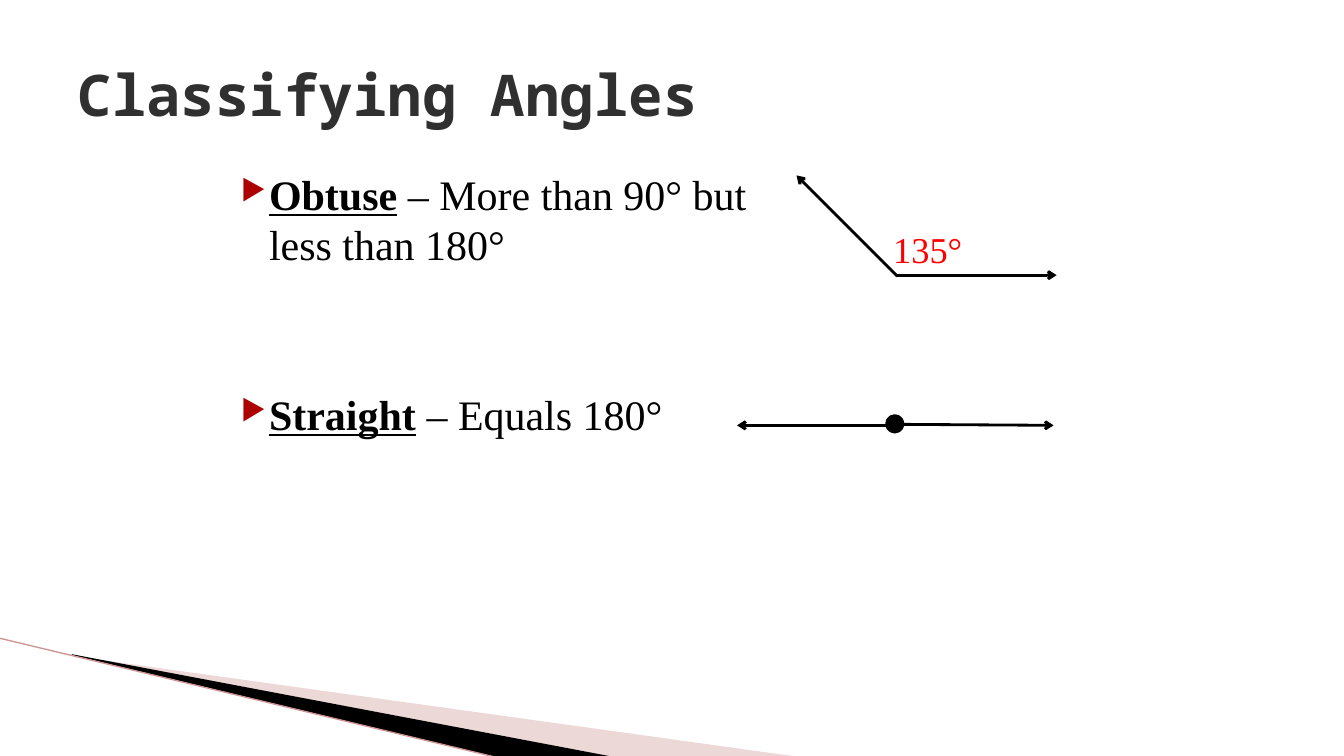
from lxml import etree
from pptx import Presentation
from pptx.dml.color import RGBColor
from pptx.enum.shapes import MSO_CONNECTOR, MSO_SHAPE
from pptx.enum.text import MSO_ANCHOR, PP_ALIGN
from pptx.oxml.ns import qn
from pptx.util import Inches, Pt

STRAIGHT = MSO_CONNECTOR.STRAIGHT
OVAL = MSO_SHAPE.OVAL
MIDDLE = MSO_ANCHOR.MIDDLE
LEFT = PP_ALIGN.LEFT

BLACK = RGBColor(0x00, 0x00, 0x00)
CHARCOAL = RGBColor(0x30, 0x30, 0x30)
RED = RGBColor(0xFF, 0x00, 0x00)
DUSTY_PINK = RGBColor(0xD2, 0x9E, 0x9E)
EDGE_PINK = RGBColor(0xCD, 0x95, 0x95)
BULLET_RED = "AD0101"
SERIF = "Times New Roman"

TITLE = "Classifying Angles"
DEFINITIONS = [
    ("Obtuse", " – More than 90° but less than 180°", 0),
    ("Straight", " – Equals 180°", 85),
]
ANGLE_LABEL = "135°"
WEDGES = [
    ([(0.73, 6.51), (7.93, 7.51), (6.08, 7.51), (0.73, 6.5)], DUSTY_PINK, 40),
    ([(0.71, 6.49), (6.09, 7.51), (4.96, 7.52), (0.72, 6.5)], BLACK, 100),
]
WEDGE_EDGE = ((-0.01, 6.33), (4.95, 7.52))
RAYS = [
    ((8.9, 2.74), (7.9, 1.74)),
    ((8.9, 2.73), (10.48, 2.73)),
    ((8.95, 4.21), (10.45, 4.22)),
    ((8.81, 4.22), (7.31, 4.22)),
]
VERTEX = (8.81, 4.14, 0.13, 0.13)


def box(*lengths):
    return [Inches(length) for length in lengths]


def add_wedge(slide, points, color, opacity):
    corners = [tuple(box(*point)) for point in points]
    builder = slide.shapes.build_freeform(*corners[0])
    builder.add_line_segments(corners[1:], close=True)
    wedge = builder.convert_to_shape()
    wedge.shadow.inherit = False
    wedge.fill.solid()
    wedge.fill.fore_color.rgb = color
    wedge.line.fill.background()
    if opacity < 100:
        color_element = wedge.fill._xPr.find(qn("a:solidFill"))[0]
        etree.SubElement(color_element, qn("a:alpha"), val=str(opacity * 1000))


def add_line(slide, start, end, color, width, arrow=False):
    line = slide.shapes.add_connector(STRAIGHT, *box(*start, *end))
    line.line.color.rgb = color
    line.line.width = Pt(width)
    if arrow:
        etree.SubElement(line.line._get_or_add_ln(), qn("a:tailEnd"), type="arrow")
    etree.SubElement(line._element.spPr, qn("a:effectLst"))


def add_bullet(paragraph):
    properties = paragraph._p.get_or_add_pPr()
    properties.set("marL", str(Inches(0.4)))
    properties.set("indent", str(-Inches(0.28)))
    bullet_color = etree.SubElement(properties, qn("a:buClr"))
    etree.SubElement(bullet_color, qn("a:srgbClr"), val=BULLET_RED)
    etree.SubElement(properties, qn("a:buSzPct"), val="68000")
    etree.SubElement(properties, qn("a:buChar"), char="▶")


def set_font(font, name, size, color):
    font.name = name
    font.size = Pt(size)
    font.color.rgb = color


def add_definitions(slide):
    frame = slide.shapes.add_textbox(*box(2.17, 1.62, 5.56, 3.13)).text_frame
    frame.word_wrap = True
    for index, (term, meaning, space) in enumerate(DEFINITIONS):
        paragraph = frame.add_paragraph() if index else frame.paragraphs[0]
        paragraph.space_before = Pt(space)
        add_bullet(paragraph)
        set_font(paragraph.font, SERIF, 30, BLACK)
        term_run = paragraph.add_run()
        term_run.text = term
        term_run.font.bold = True
        term_run.font.underline = True
        paragraph.add_run().text = meaning


def add_title(slide):
    title = slide.shapes.title
    title.left, title.top, title.width, title.height = box(0.67, 0.3, 12, 1.25)
    title.text_frame.text = TITLE
    title.text_frame.vertical_anchor = MIDDLE
    paragraph = title.text_frame.paragraphs[0]
    paragraph.alignment = LEFT
    set_font(paragraph.font, "Noto Sans Mono", 41, CHARCOAL)
    paragraph.font.bold = True


def add_angle_label(slide):
    frame = slide.shapes.add_textbox(*box(8.76, 2.2, 1.02, 0.54)).text_frame
    frame.word_wrap = True
    frame.text = ANGLE_LABEL
    set_font(frame.paragraphs[0].font, SERIF, 26, RED)


def add_vertex(slide):
    vertex = slide.shapes.add_shape(OVAL, *box(*VERTEX))
    vertex.shadow.inherit = False
    vertex.fill.solid()
    vertex.fill.fore_color.rgb = BLACK
    vertex.line.color.rgb = BLACK
    vertex.line.width = Pt(4.33)


def main():
    presentation = Presentation()
    presentation.slide_width, presentation.slide_height = box(13.33, 7.5)
    slide = presentation.slides.add_slide(presentation.slide_layouts[5])
    for wedge in WEDGES:
        add_wedge(slide, *wedge)
    add_line(slide, *WEDGE_EDGE, EDGE_PINK, 0.95)
    add_definitions(slide)
    add_title(slide)
    for ray in RAYS:
        add_line(slide, *ray, BLACK, 2, arrow=True)
    add_angle_label(slide)
    add_vertex(slide)
    presentation.save("out.pptx")


if __name__ == "__main__":
    main()
